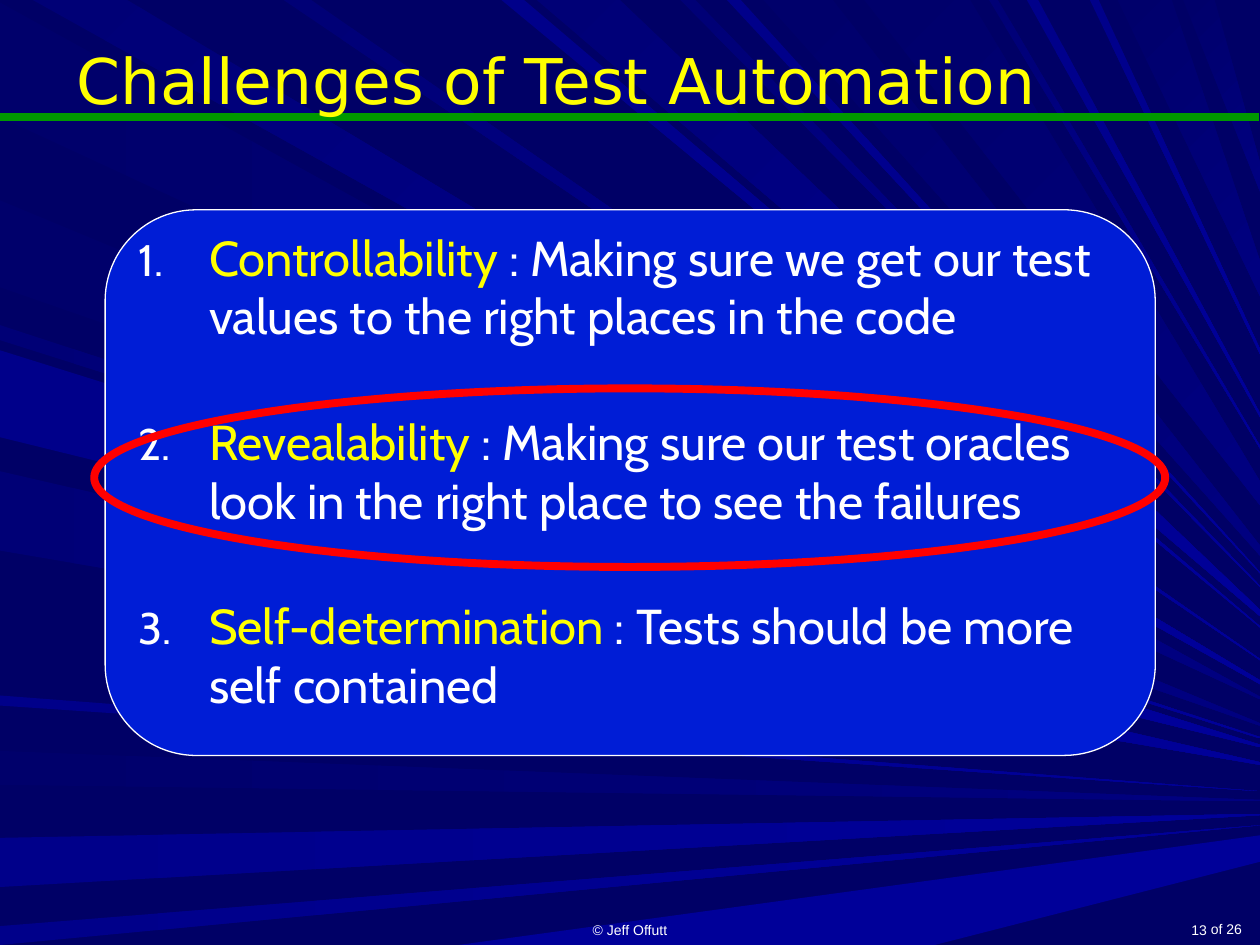
from dataclasses import dataclass

from lxml.etree import SubElement
from pptx import Presentation
from pptx.dml.color import RGBColor
from pptx.enum.shapes import MSO_CONNECTOR, MSO_SHAPE
from pptx.enum.text import MSO_ANCHOR, MSO_AUTO_SIZE, PP_ALIGN
from pptx.oxml.ns import qn
from pptx.util import Cm, Pt


@dataclass(frozen=True)
class Theme:
    background: str = "000066"
    faint: tuple = ("00006B", "000080")
    medium: tuple = ("000076", "000099")
    strong: tuple = ("00008A", "000099")
    panel: str = "001DD6"
    text: str = "FFFFFF"
    accent: str = "FFFF00"
    rule: str = "009900"
    highlight: str = "FF0000"
    title_font: str = "DejaVu Sans"
    body_font: str = "Cabin"
    footer_font: str = "Arial"
    title_size: int = 36
    body_size: int = 28
    footer_size: int = 8
    heavy_line: float = 4.5
    thin_line: float = 0.75


THEME = Theme()

# Rays run from a slide edge toward one focus beyond the right edge.
# Ray positions count in units of which the slide is 1000 wide and 750 high.
RAY_UNIT = Cm(0.0254)
RAY_RIGHT, RAY_BOTTOM = 1000, 750
FOCUS_X, FOCUS_Y = 1170, 640
LEFT_RAYS = [
    (2, 93, THEME.faint), (159, 228, THEME.faint), (258, 270, THEME.medium),
    (278, 347, THEME.strong), (374, 437, THEME.medium), (552, 560, THEME.strong),
    (596, 623, THEME.faint), (665, 704, THEME.strong), (735, 750, THEME.strong),
]
TOP_RAYS = [
    (26, 101, THEME.medium), (225, 247, THEME.medium), (398, 416, THEME.strong),
    (426, 492, THEME.medium), (540, 552, THEME.medium), (577, 588, THEME.strong),
    (606, 661, THEME.faint), (686, 770, THEME.faint), (785, 792, THEME.medium),
    (815, 824, THEME.strong), (865, 872, THEME.strong), (887, 930, THEME.faint),
    (939, 964, THEME.faint),
]
BOTTOM_RAYS = [(364, 742, ("000099", "000099"))]

CHALLENGES = [
    ("Controllability", " : Making sure we get our test values to the right places in the code"),
    ("Revealability", " : Making sure our test oracles look in the right place to see the failures"),
    ("Self-determination", " : Tests should be more self contained"),
]


def rgb(value):
    return RGBColor.from_string(value)


def format_run(run, font_name, size, color):
    run.font.name = font_name
    run.font.size = Pt(size)
    run.font.color.rgb = rgb(color)


def right_edge_height(x, y):
    """Height at which the line from (x, y) to the focus crosses the right edge."""
    return y + (FOCUS_Y - y) * (RAY_RIGHT - x) / (FOCUS_X - x)


def add_ray(shapes, first, second, colors, angle, spread):
    """Draw a ray between two edge points; spread is its relative width at the right."""
    heights = [right_edge_height(*point) for point in (first, second)]
    middle = sum(heights) / 2
    ends = [(RAY_RIGHT, round(middle + (height - middle) * spread)) for height in heights]
    builder = shapes.build_freeform(*first, scale=RAY_UNIT)
    builder.add_line_segments([second, ends[1], ends[0]], close=True)
    shape = builder.convert_to_shape()
    shape.shadow.inherit = False
    shape.line.fill.background()
    shape.fill.gradient()
    shape.fill.gradient_angle = angle
    for stop, color in zip(shape.fill.gradient_stops, colors):
        stop.color.rgb = rgb(color)


def add_backdrop(slide):
    slide.background.fill.solid()
    slide.background.fill.fore_color.rgb = rgb(THEME.background)
    shapes = slide.shapes.add_group_shape().shapes
    for start, end, colors in LEFT_RAYS:
        add_ray(shapes, (0, start), (0, end), colors, 0, 0.2)
    for start, end, colors in BOTTOM_RAYS:
        add_ray(shapes, (start, RAY_BOTTOM), (end, RAY_BOTTOM), colors, 0, 1)
    for start, end, colors in TOP_RAYS:
        add_ray(shapes, (start, 0), (end, 0), colors, 315, 0.4)


def add_rule(slide, y, width):
    line = slide.shapes.add_connector(MSO_CONNECTOR.STRAIGHT, 0, y, width, y)
    line.line.color.rgb = rgb(THEME.rule)
    line.line.width = Pt(THEME.heavy_line)
    SubElement(line._element.spPr, qn("a:effectLst"))


def add_outlined_shape(slide, kind, box, line_color, line_width, fill=None):
    shape = slide.shapes.add_shape(kind, *box)
    shape.shadow.inherit = False
    shape.line.color.rgb = rgb(line_color)
    shape.line.width = Pt(line_width)
    if fill:
        shape.fill.solid()
        shape.fill.fore_color.rgb = rgb(fill)
    else:
        shape.fill.background()


def place_placeholder(slide, placeholder, box):
    """Move a placeholder to its box, in front of what is already drawn."""
    placeholder.left, placeholder.top, placeholder.width, placeholder.height = box
    slide.shapes._spTree.append(placeholder._element)
    placeholder.text_frame.auto_size = MSO_AUTO_SIZE.NONE


def fill_title(slide, text, box):
    title = slide.shapes.title
    place_placeholder(slide, title, box)
    title.text_frame.text = text
    title.text_frame.vertical_anchor = MSO_ANCHOR.MIDDLE
    paragraph = title.text_frame.paragraphs[0]
    paragraph.alignment = PP_ALIGN.CENTER
    format_run(paragraph.runs[0], THEME.title_font, THEME.title_size, THEME.accent)


def number_paragraph(paragraph):
    properties = paragraph._p.get_or_add_pPr()
    indent = Cm(1.42)
    properties.set("marL", str(indent))
    properties.set("indent", str(-indent))
    color = SubElement(properties, qn("a:buClr"))
    SubElement(color, qn("a:srgbClr"), val=THEME.text)
    SubElement(properties, qn("a:buSzPct"), val="90000")
    SubElement(properties, qn("a:buFont"), typeface=THEME.body_font)
    SubElement(properties, qn("a:buAutoNum"), type="arabicPeriod")


def fill_numbered_list(slide, items, box):
    body = slide.placeholders[1]
    place_placeholder(slide, body, box)
    frame = body.text_frame
    for index, (term, explanation) in enumerate(items):
        paragraph = frame.add_paragraph() if index else frame.paragraphs[0]
        number_paragraph(paragraph)
        paragraph.space_before = Pt(38 if index else 0)
        for text, color in ((term, THEME.accent), (explanation, THEME.text)):
            run = paragraph.add_run()
            run.text = text
            format_run(run, THEME.body_font, THEME.body_size, color)


def add_footer(slide, text, box, alignment, anchor=MSO_ANCHOR.BOTTOM):
    frame = slide.shapes.add_textbox(*box).text_frame
    frame.word_wrap = True
    frame.vertical_anchor = anchor
    frame.text = text
    paragraph = frame.paragraphs[0]
    paragraph.alignment = alignment
    format_run(paragraph.runs[0], THEME.footer_font, THEME.footer_size, THEME.text)


def main():
    presentation = Presentation()
    presentation.slide_width, presentation.slide_height = Cm(25.4), Cm(19.05)
    slide = presentation.slides.add_slide(presentation.slide_layouts[1])

    # Backdrop and rule under the title
    add_backdrop(slide)
    add_rule(slide, Cm(2.36), Cm(25.37))

    # Title and numbered challenges on their panel
    add_outlined_shape(slide, MSO_SHAPE.ROUNDED_RECTANGLE,
                       (Cm(2.12), Cm(4.23), Cm(21.17), Cm(11)),
                       THEME.text, THEME.thin_line, THEME.panel)
    fill_title(slide, "Challenges of Test Automation",
               (Cm(0.21), Cm(0), Cm(22.01), Cm(3.18)))
    fill_numbered_list(slide, CHALLENGES, (Cm(2.54), Cm(4.45), Cm(20.32), Cm(13.76)))

    # Footer
    add_footer(slide, "© Jeff Offutt", (Cm(8.68), Cm(18.2), Cm(8.04), Cm(0.85)), PP_ALIGN.CENTER)
    add_footer(slide, "13", (Cm(20), Cm(18.2), Cm(4.58), Cm(0.85)), PP_ALIGN.RIGHT)
    add_footer(slide, "of 26", (Cm(24.12), Cm(18.43), Cm(1.17), Cm(0.6)), PP_ALIGN.RIGHT,
               MSO_ANCHOR.TOP)

    # Ring around the second challenge
    add_outlined_shape(slide, MSO_SHAPE.OVAL, (Cm(1.9), Cm(7.83), Cm(21.59), Cm(3.6)),
                       THEME.highlight, THEME.heavy_line)

    presentation.save("out.pptx")


if __name__ == "__main__":
    main()
